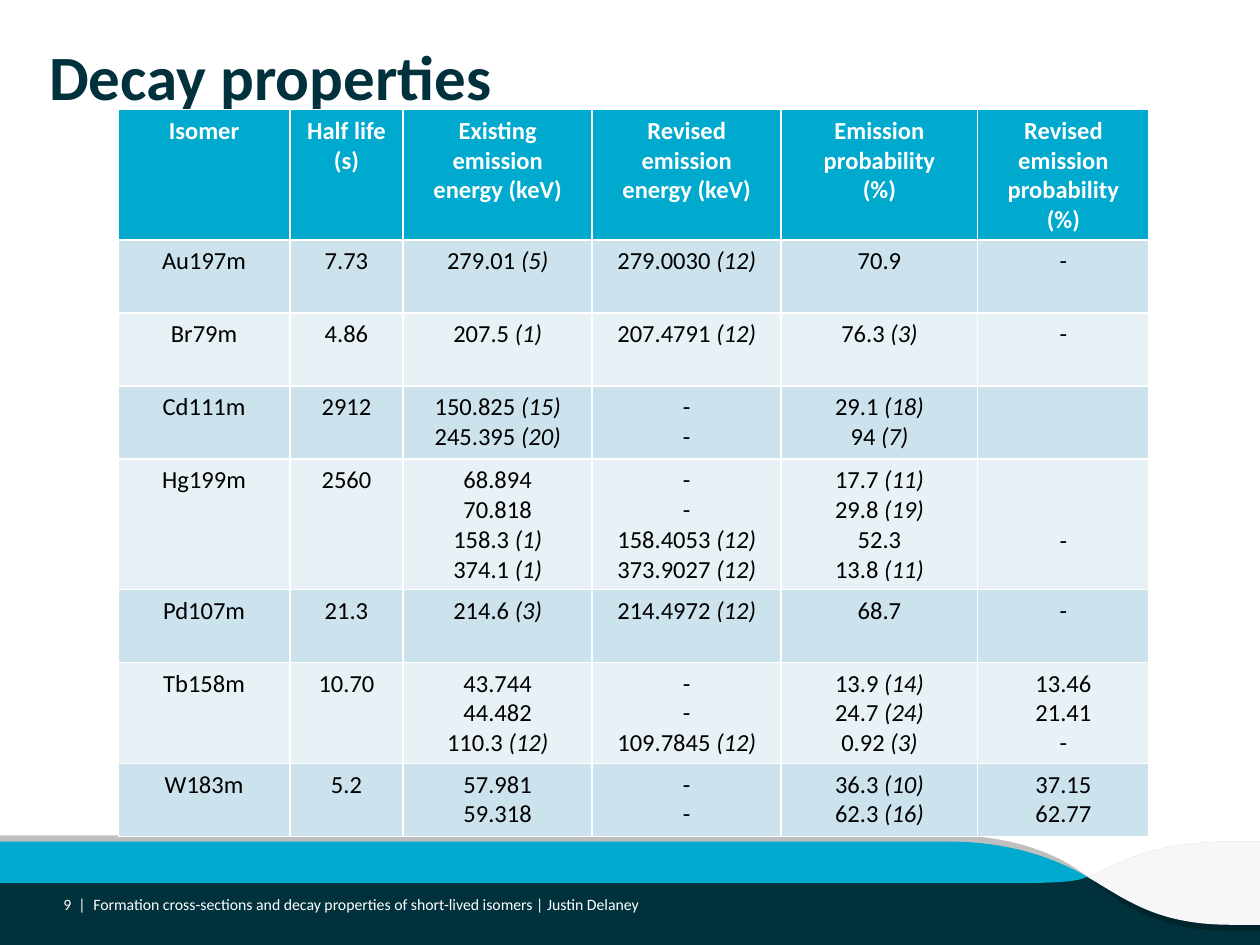
from lxml import etree
from pptx import Presentation
from pptx.dml.color import RGBColor
from pptx.enum.shapes import MSO_SHAPE
from pptx.enum.text import MSO_ANCHOR, PP_ALIGN
from pptx.oxml.ns import qn
from pptx.util import Inches, Pt

RECTANGLE = MSO_SHAPE.RECTANGLE
LEFT, CENTER, RIGHT = PP_ALIGN.LEFT, PP_ALIGN.CENTER, PP_ALIGN.RIGHT
TOP, MIDDLE = MSO_ANCHOR.TOP, MSO_ANCHOR.MIDDLE
NAVY, CYAN, WHITE, BLACK = "00313C", "00A9CE", "FFFFFF", "000000"
BANDS = ["CCE2ED", "E7F1F6"]
LINE_HEIGHT = 0.24
CELL_MARGIN = 0.05

CROSSING = (8.63, 6.96)
BAND_CURVE = (8.4, 7.01, 8.54, 7, *CROSSING)
PALE_CURVE = (9.08, 6.68, 8.83, 6.89, *CROSSING)
WAVES = [
    ("BFBFBF", [
        [(10, 6.68), (9.78, 6.68), PALE_CURVE, (10, 6.96), (10, 7.39)],
        [(7.54, 6.63), (0, 6.63), (0, 6.96), CROSSING, (8.4, 6.77, 8.01, 6.63, 7.54, 6.63)],
    ]),
    ("00252D", [
        [CROSSING, (0, 6.96), (0, 7.01), (7.95, 7.01), BAND_CURVE],
        [(10, 6.96), CROSSING, (8.87, 7.16, 9.18, 7.39, 9.77, 7.39), (10, 7.39)],
    ]),
    (CYAN, [
        [CROSSING, (8.37, 6.81, 8.01, 6.68, 7.54, 6.68), (0, 6.68), (0, 7.01),
         (7.95, 7.01), BAND_CURVE],
    ]),
    ("F7F7F7", [
        [(9.78, 6.68), PALE_CURVE, (8.94, 7.14, 9.18, 7.34, 9.77, 7.34), (10, 7.34), (10, 6.68)],
    ]),
]

COLUMN_WIDTHS = [1.36, 0.9, 1.5, 1.5, 1.56, 1.36]
HEADER_HEIGHT, ROW_HEIGHT = 0.86, 0.58
HEADERS = [
    "Isomer", "Half life (s)", "Existing emission energy (keV)",
    "Revised emission energy (keV)", "Emission probability\n(%)",
    "Revised emission\nprobability\n(%)",
]
ISOMERS = [
    ["Au197m", "7.73", "279.01 (5)", "279.0030 (12)", "70.9", "-"],
    ["Br79m", "4.86", "207.5 (1)", "207.4791 (12)", "76.3 (3)", "-"],
    ["Cd111m", "2912", "150.825 (15) 245.395 (20)", "-\n-", "29.1 (18)\n94 (7)", ""],
    ["Hg199m", "2560", "68.894\n70.818\n158.3 (1)\n374.1 (1)",
     "-\n-\n158.4053 (12) 373.9027 (12)",
     "17.7 (11)\n29.8 (19)\n52.3\n13.8 (11)", "-"],
    ["Pd107m", "21.3", "214.6 (3)", "214.4972 (12)", "68.7", "-"],
    ["Tb158m", "10.70", "43.744\n44.482\n110.3 (12)", "-\n-\n109.7845 (12)",
     "13.9 (14)\n24.7 (24)\n0.92 (3)", "13.46\n21.41\n-"],
    ["W183m", "5.2", "57.981\n59.318", "-\n-", "36.3 (10)\n62.3 (16)", "37.15\n62.77"],
]
HG_ROW, LAST_COLUMN = 4, 5


def color(value):
    return RGBColor.from_string(value)


def paint(shape, fill):
    shape.shadow.inherit = False
    shape.fill.solid()
    shape.fill.fore_color.rgb = color(fill)
    shape.line.fill.background()


def style(paragraph, size, text_color, bold=False, align=LEFT):
    paragraph.alignment = align
    font = paragraph.font
    font.name, font.size, font.bold = "Calibri", Pt(size), bold
    font.color.rgb = color(text_color)


def set_frame(frame, anchor):
    frame.word_wrap = True
    frame.vertical_anchor = anchor
    frame.margin_left = frame.margin_right = frame.margin_top = frame.margin_bottom = 0


def to_vertices(item):
    return [(Inches(x), Inches(y)) for x, y in zip(item[::2], item[1::2])]


def bend(segments):
    curve = etree.Element(qn("a:cubicBezTo"))
    segments[0].addprevious(curve)
    for segment in segments:
        curve.append(segment[0])
        segment.getparent().remove(segment)


def add_wave(page, fill, outlines):
    builder = page.shapes.build_freeform(*to_vertices(outlines[0][0])[0])
    for index, (start, *items) in enumerate(outlines):
        if index:
            builder.move_to(*to_vertices(start)[0])
        vertices = [vertex for item in items for vertex in to_vertices(item)]
        builder.add_line_segments(vertices, close=True)
    wave = builder.convert_to_shape()
    segments = iter(list(wave._element.iter(qn("a:lnTo"))))
    for _, *items in outlines:
        for item in items:
            group = [next(segments) for _ in to_vertices(item)]
            if len(group) == 3:
                bend(group)
    paint(wave, fill)


def add_base(page):
    base = page.shapes.add_shape(RECTANGLE, 0, Inches(6.96), Inches(10), Inches(0.54))
    paint(base, NAVY)


def add_title(page, text):
    title = page.shapes.title
    title.left, title.top = Inches(0.39), Inches(0.3)
    title.width, title.height = Inches(9.25), Inches(0.93)
    set_frame(title.text_frame, TOP)
    title.text_frame.text = text
    style(title.text_frame.paragraphs[0], 36, NAVY, bold=True)


def add_footer(page, left, width, text, align):
    box = page.shapes.add_textbox(Inches(left), Inches(7.11), Inches(width), Inches(0.14))
    set_frame(box.text_frame, MIDDLE)
    box.text_frame.text = text
    style(box.text_frame.paragraphs[0], 9, WHITE, align=align)


def add_measurements(paragraph, line):
    for part in line.split(")"):
        value, bracket, uncertainty = part.partition("(")
        if value:
            paragraph.add_run().text = value
        if bracket:
            span = paragraph.add_run()
            span.text = f"({uncertainty})"
            span.font.italic = True


def fill_cell(cell, text, row):
    header = row == 0
    cell.fill.solid()
    cell.fill.fore_color.rgb = color(CYAN if header else BANDS[(row - 1) % 2])
    frame = cell.text_frame
    for index, line in enumerate(text.split("\n")):
        paragraph = frame.add_paragraph() if index else frame.paragraphs[0]
        if header:
            paragraph.add_run().text = line
        else:
            add_measurements(paragraph, line)
        style(paragraph, 14, WHITE if header else BLACK, bold=header, align=CENTER)


def add_isomer_table(page):
    rows = [HEADERS] + ISOMERS
    height = HEADER_HEIGHT + ROW_HEIGHT * len(ISOMERS)
    table = page.shapes.add_table(
        len(rows), len(HEADERS), Inches(0.94), Inches(0.87),
        Inches(sum(COLUMN_WIDTHS)), Inches(height)).table
    for column, width in zip(table.columns, COLUMN_WIDTHS):
        column.width = Inches(width)
    for row, texts in enumerate(rows):
        table.rows[row].height = Inches(ROW_HEIGHT if row else HEADER_HEIGHT)
        for column, text in enumerate(texts):
            fill_cell(table.cell(row, column), text, row)
    table.cell(HG_ROW, LAST_COLUMN).margin_top = Inches(CELL_MARGIN + 2 * LINE_HEIGHT)


def main():
    deck = Presentation()
    deck.slide_width, deck.slide_height = Inches(10), Inches(7.5)
    page = deck.slides.add_slide(deck.slide_layouts[5])
    add_base(page)
    for fill, outlines in WAVES:
        add_wave(page, fill, outlines)
    add_title(page, "Decay properties")
    add_footer(page, 0.74, 6.65, "Formation cross-sections and decay properties of "
               "short-lived isomers | Justin Delaney", LEFT)
    add_footer(page, 0.36, 0.32, "9  |", RIGHT)
    add_isomer_table(page)
    deck.save("out.pptx")


if __name__ == "__main__":
    main()
